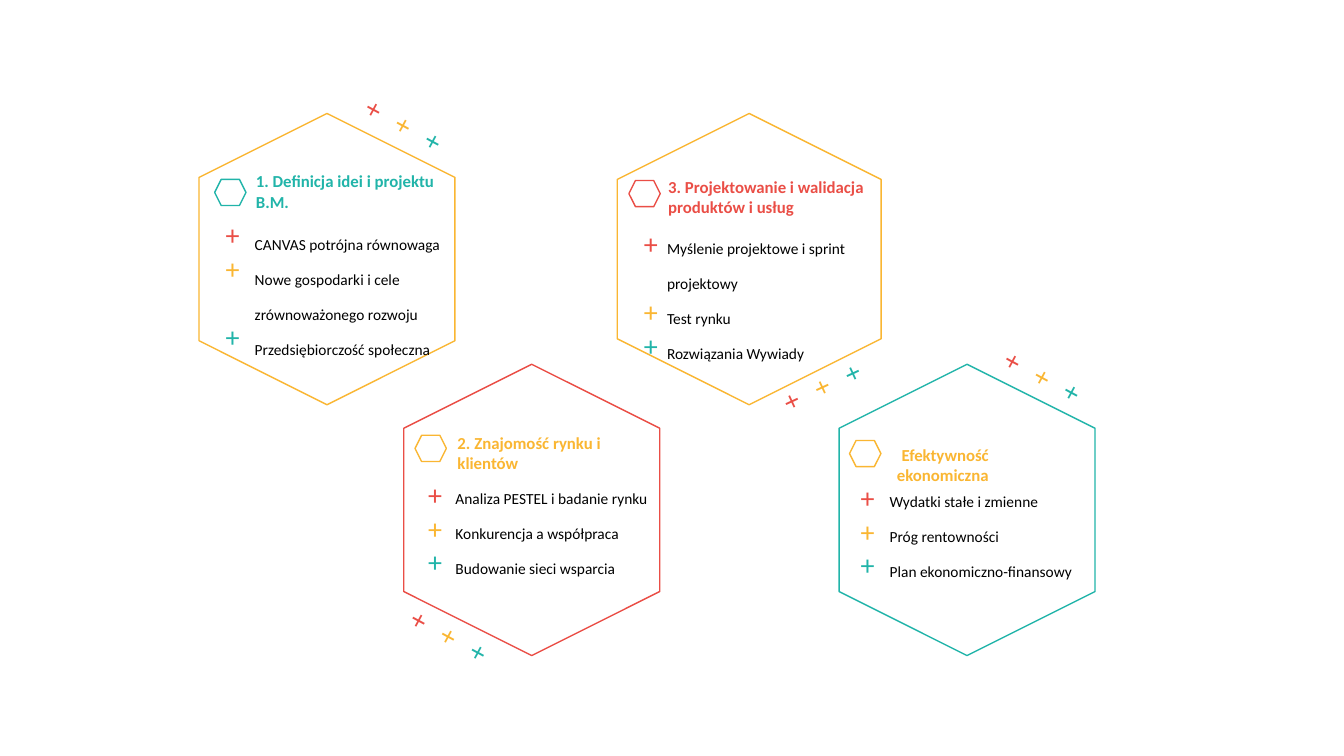
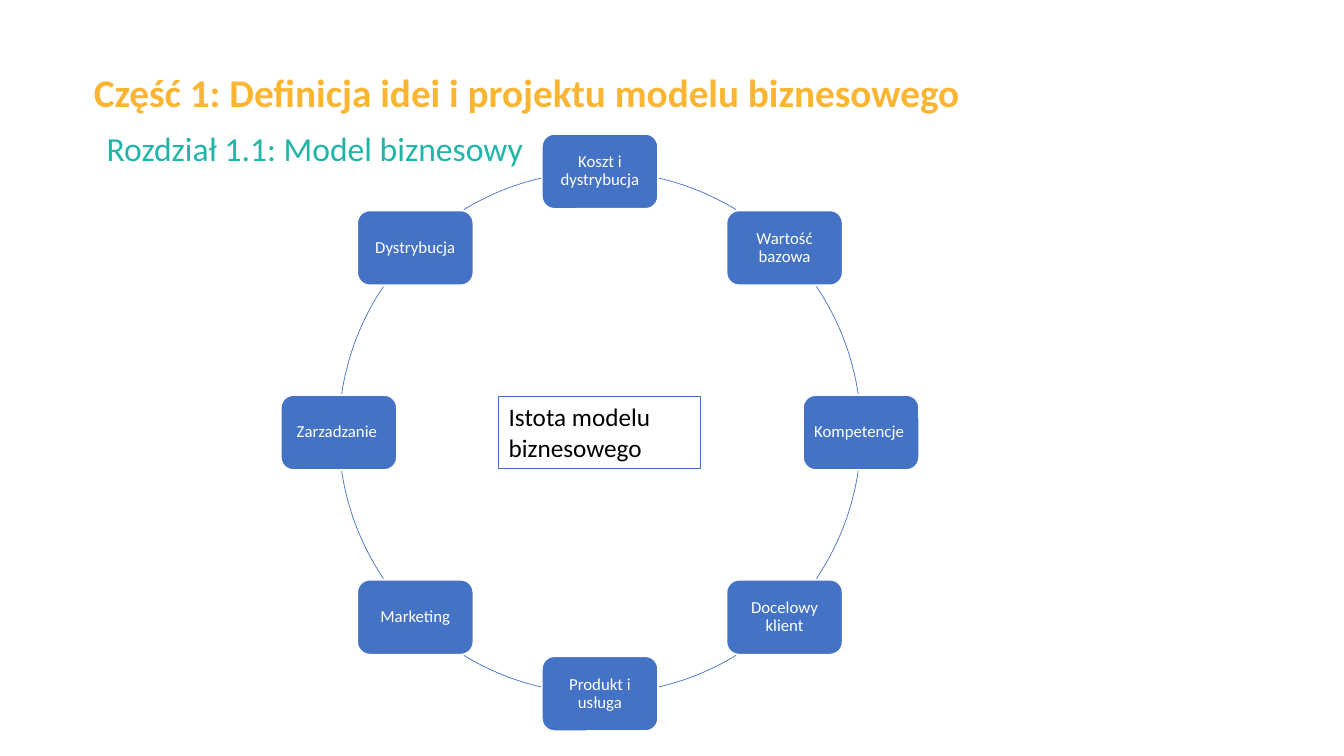
import math

import pptx
import pptx.util
import pptx.dml.color
import pptx.enum.shapes
import pptx.enum.text

Cm = pptx.util.Cm
Pt = pptx.util.Pt
Kind = pptx.enum.shapes.MSO_SHAPE
Align = pptx.enum.text.PP_ALIGN
Anchor = pptx.enum.text.MSO_ANCHOR

COLORS = {
    "red": "EA4E46",
    "yellow": "FAB632",
    "teal": "21B4A9",
    "blue": "4472C4",
    "white": "FFFFFF",
    "black": "000000",
}
PLUS_COLORS = ("red", "yellow", "teal")

CARDS = [
    dict(
        center=(8.24, 6.53), width=6.45, outline="yellow", accent="teal",
        icon=(5.41, 4.52),
        heading=(6.2, 4.19, 5.28), title="1. Definicja idei i projektu B.M.",
        body=(6.17, 5.38, 6.86),
        items=["CANVAS potrójna równowaga",
               "Nowe gospodarki i cele zrównoważonego rozwoju",
               "Przedsiębiorczość społeczna"],
        bullets=(5.44, 5.36), gap_before=2,
        trail=(9.63, 1.65, 298.4),
    ),
    dict(
        center=(13.4, 12.85), width=6.45, outline="red", accent="yellow",
        icon=(10.46, 10.97),
        heading=(11.28, 10.77, 5.33), title="2. Znajomość rynku i klientów",
        body=(11.23, 11.79, 5.51),
        items=["Analiza PESTEL i badanie rynku",
               "Konkurencja a współpraca",
               "Budowanie sieci wsparcia"],
        bullets=(10.54, 11.91),
        trail=(10.77, 14.53, 298.4),
    ),
    dict(
        center=(18.88, 6.53), width=6.65, outline="yellow", accent="red",
        icon=(15.85, 4.55),
        heading=(16.59, 4.32, 5.84),
        title="3. Projektowanie i walidacja produktów i usług",
        body=(16.56, 5.49, 6.65),
        items=["Myślenie projektowe i sprint projektowy",
               "Test rynku",
               "Rozwiązania Wywiady"],
        bullets=(15.98, 5.59), gap_before=1,
        trail=(20.09, 8.28, 245.2),
    ),
    dict(
        center=(24.37, 12.85), width=6.45, outline="teal", accent="yellow",
        icon=(21.41, 11.1),
        heading=(22.17, 11.07, 3), title="Efektywność ekonomiczna",
        heading_align=Align.RIGHT,
        body=(22.17, 11.86, 6.65),
        items=["Wydatki stałe i zmienne",
               "Próg rentowności",
               "Plan ekonomiczno-finansowy"],
        bullets=(21.44, 11.99),
        trail=(25.73, 7.98, 298.4),
    ),
]

STEPS = ["Koszt i dystrybucja", "Wartość bazowa", "Kompetencje ",
         "Docelowy klient", "Produkt i usługa", "Marketing",
         "Zarzadzanie ", "Dystrybucja"]
HALF_RING = [(13, 31.4), (56, 81.6), (98.4, 124), (148.6, 167)]


class Painter:
    font = "Calibri"

    def __init__(self, deck):
        self.deck = deck
        self.page = None

    def new_page(self, layout):
        self.page = self.deck.slides.add_slide(self.deck.slide_layouts[layout])

    def color(self, name):
        return pptx.dml.color.RGBColor.from_string(COLORS[name])

    def set_text(self, box, lines, size, color, bold=False, align=Align.LEFT,
                 anchor=Anchor.TOP, spacing=None):
        frame = box.text_frame
        frame.word_wrap = True
        frame.vertical_anchor = anchor
        frame.text = "\n".join(lines)
        for para in frame.paragraphs:
            para.alignment = align
            para.line_spacing = spacing
            para.font.name = self.font
            para.font.size = Pt(size)
            para.font.bold = bold
            para.font.color.rgb = self.color(color)

    def text(self, left, top, width, height, lines, size, color, **style):
        box = self.page.shapes.add_textbox(
            Cm(left), Cm(top), Cm(width), Cm(height))
        self.set_text(box, lines, size, color, **style)
        return box

    def title(self, left, top, width, height, line, size, color):
        box = self.page.shapes.title
        box.left, box.top = Cm(left), Cm(top)
        box.width, box.height = Cm(width), Cm(height)
        self.set_text(box, [line], size, color, bold=True)

    def shape(self, kind, left, top, width, height, line, weight=1, fill=None):
        shape = self.page.shapes.add_shape(
            kind, Cm(left), Cm(top), Cm(width), Cm(height))
        shape.shadow.inherit = False
        if fill:
            shape.fill.solid()
            shape.fill.fore_color.rgb = self.color(fill)
        else:
            shape.fill.background()
        shape.line.color.rgb = self.color(line)
        shape.line.width = Pt(weight)
        return shape

    def upright_hexagon(self, center, width, height, line):
        x, y = center
        hexagon = self.shape(Kind.HEXAGON, x - height / 2, y - width / 2,
                             height, width, line)
        hexagon.rotation = 90

    def pluses(self, left, top, width, gap_before=None, rotation=0):
        box = self.text(left, top, width, 2.82, "+++", 20, "black")
        box.rotation = rotation
        for index, para in enumerate(box.text_frame.paragraphs):
            para.font.color.rgb = self.color(PLUS_COLORS[index])
            if index == gap_before:
                para.space_before = Pt(24.4)

    def card(self, card):
        self.upright_hexagon(card["center"], card["width"], 7.34,
                             card["outline"])
        self.shape(Kind.HEXAGON, *card["icon"], 0.79, 0.66, card["accent"])
        self.text(*card["heading"], 1.27, [card["title"]], 12, card["accent"],
                  bold=True, align=card.get("heading_align", Align.LEFT))
        self.text(*card["body"], 2.82, card["items"], 11, "black",
                  spacing=Pt(25))
        self.pluses(*card["bullets"], 0.76, card.get("gap_before"))
        left, top, rotation = card["trail"]
        self.pluses(left, top, 1.09, rotation=rotation)

    def arc(self, center, radius, start, end):
        x, y = center
        arc = self.shape(Kind.ARC, x - radius, y - radius,
                         2 * radius, 2 * radius, "blue", 0.5)
        for index, angle in enumerate((start, end)):
            degrees = (angle - 90) % 360
            arc.adjustments[index] = degrees * 0.6

    def node(self, x, y, label):
        width, height = 2.92, 1.88
        node = self.shape(Kind.ROUNDED_RECTANGLE, x - width / 2, y - height / 2,
                          width, height, "white", fill="blue")
        self.set_text(node, [label], 12, "white", align=Align.CENTER,
                      anchor=Anchor.MIDDLE, spacing=0.9)
        frame = node.text_frame
        frame.margin_left = frame.margin_right = Cm(0.13)
        frame.margin_top = frame.margin_bottom = Cm(0.13)

    def ring(self, center, radius, labels):
        for turn in (0, 180):
            for start, end in HALF_RING:
                self.arc(center, radius, start + turn, end + turn)
        for index, label in enumerate(labels):
            angle = 2 * math.pi * index / len(labels)
            self.node(center[0] + radius * math.sin(angle),
                      center[1] - radius * math.cos(angle), label)


def main():
    deck = pptx.Presentation()
    deck.slide_width, deck.slide_height = Cm(33.87), Cm(19.05)
    painter = Painter(deck)

    painter.new_page(6)
    for card in CARDS:
        painter.card(card)

    painter.new_page(5)
    painter.title(2.11, 1.6, 25.98, 1.45,
                  "Część 1: Definicja idei i projektu modelu biznesowego",
                  28, "yellow")
    painter.ring((15.12, 10.9), 6.58, STEPS)
    core = painter.shape(Kind.RECTANGLE, 12.57, 10, 5.08, 1.8, "blue", 0.75)
    painter.set_text(core, ["Istota modelu biznesowego"], 18, "black")
    painter.text(2.44, 3.1, 21.36, 1.27, ["Rozdział 1.1: Model biznesowy"],
                 24, "teal")

    deck.save("out.pptx")


if __name__ == "__main__":
    main()
